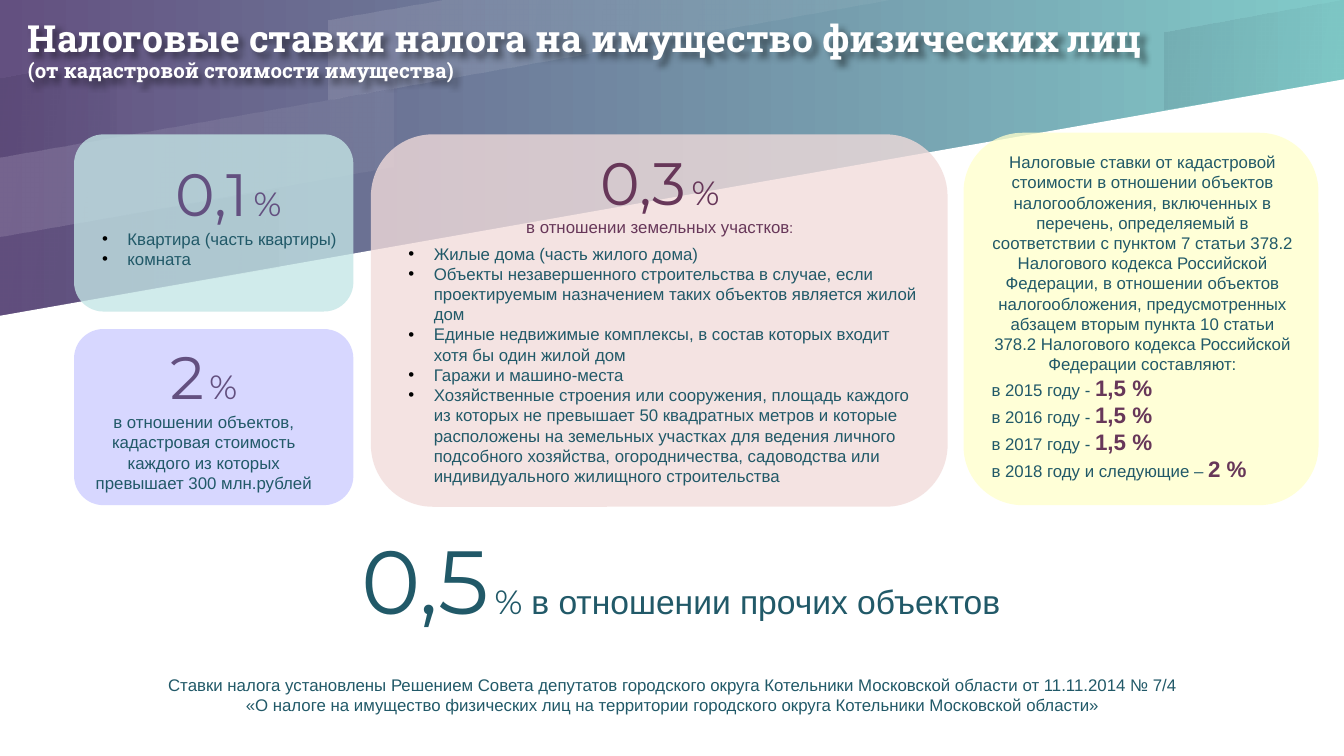
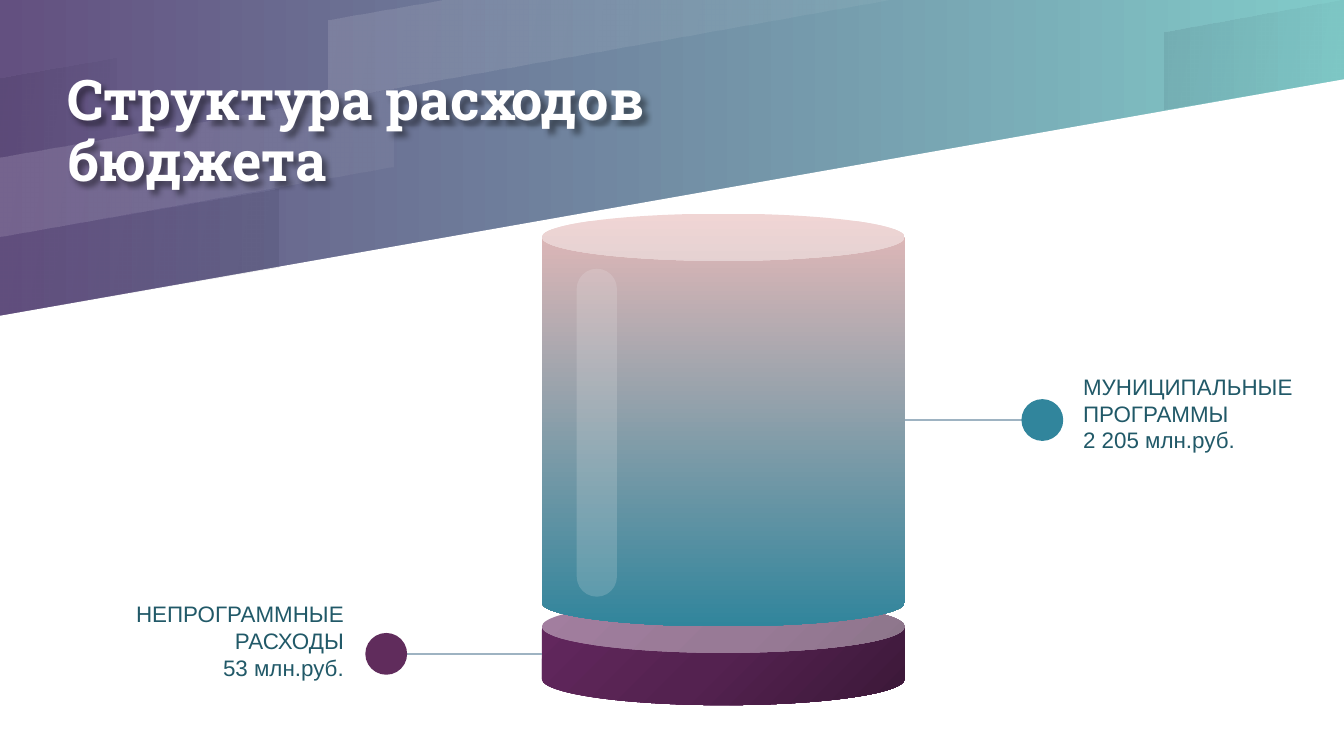
from copy import deepcopy

from lxml import etree
from pptx import Presentation
from pptx.dml.color import RGBColor
from pptx.enum import shapes, text
from pptx.oxml import ns
from pptx.util import Cm, Pt

# Colours
PURPLE = RGBColor(0x63, 0x50, 0x80)
TURQUOISE = RGBColor(0x81, 0xCB, 0xC9)
WHITE = RGBColor(0xFF, 0xFF, 0xFF)
NIGHT = RGBColor(0x00, 0x00, 0x1A)
BLACK = RGBColor(0x00, 0x00, 0x00)
INK = RGBColor(0x21, 0x59, 0x68)
PLUM = RGBColor(0x67, 0x37, 0x59)
MINT = RGBColor(0xC4, 0xE6, 0xE6)
ROSE = RGBColor(0xF2, 0xDC, 0xDB)
CREAM = RGBColor(0xFF, 0xFF, 0xCC)
LILAC = RGBColor(0xCC, 0xCC, 0xFF)
LINE_GREY = RGBColor(0x9E, 0xB3, 0xC2)
SHINE = RGBColor(0xF2, 0xF2, 0xF2)
PINK = RGBColor(0xE6, 0xB9, 0xB8)
TEAL = RGBColor(0x31, 0x85, 0x9C)
BERRY = RGBColor(0x60, 0x2C, 0x5C)
WINE_DARK = RGBColor(0x3B, 0x18, 0x38)
WINE_MID = RGBColor(0x54, 0x22, 0x50)
WINE_LIGHT = RGBColor(0x64, 0x28, 0x5F)

# Fonts
BODY = "Arial"
FIGURE = "Montserrat"
HEADING = "Roboto Slab"

SLIDE_W, SLIDE_H = 25.4, 14.29
LEFT, CENTER, RIGHT = text.PP_ALIGN.LEFT, text.PP_ALIGN.CENTER, text.PP_ALIGN.RIGHT
TOP, MIDDLE = text.MSO_ANCHOR.TOP, text.MSO_ANCHOR.MIDDLE
CARD = shapes.MSO_SHAPE.ROUNDED_RECTANGLE

# Slanted bands behind every slide: colour, opacity at both ends, corners
BANDS = [
    (WHITE, (12, 5), [(8.43, 0), (6.2, 0.38), (6.2, 1.88), (16.89, 0)]),
    (NIGHT, (8, 2), [(0, 1.47), (0, 2.97), (2.21, 2.59), (2.21, 1.09)]),
    (NIGHT, (2, 8), [(0, 4.47), (0, 5.97), (5.26, 5.05), (5.26, 3.56)]),
    (NIGHT, (8, 2), [(25.4, 0), (25.37, 0), (22, 0.61), (22, 2.08), (25.4, 1.5)]),
    (WHITE, (12, 5), [(0, 2.97), (0, 4.47), (7.44, 3.15), (7.44, 1.68)]),
]


def sub(parent, tag, **attributes):
    return etree.SubElement(parent, ns.qn(tag), **attributes)


# Fills
def gradient(fill, start, end, angle=0):
    fill.gradient()
    fill.gradient_angle = -angle % 360
    for stop, color, position in zip(fill.gradient_stops, (start, end), (0, 1)):
        stop.color.rgb = color
        stop.position = position


def set_opacity(shape, *percents):
    colors = list(shape._element.spPr.iter(ns.qn("a:srgbClr")))
    for color, percent in zip(colors, percents):
        sub(color, "a:alpha", val=str(percent * 1000))


def plain(shape, color=None):
    shape.shadow.inherit = False
    shape.line.fill.background()
    if color is not None:
        shape.fill.solid()
        shape.fill.fore_color.rgb = color
    return shape


def preset(slide, kind, place, color=None, opacity=None, adjust=None):
    shape = plain(slide.shapes.add_shape(kind, *map(Cm, place)), color)
    if opacity is not None:
        set_opacity(shape, opacity)
    if adjust is not None:
        shape.adjustments[0] = adjust
    return shape


def outline(slide, corners, color=None):
    points = [(Cm(x), Cm(y)) for x, y in corners]
    builder = slide.shapes.build_freeform(*points[0])
    builder.add_line_segments(points[1:], close=True)
    return plain(builder.convert_to_shape(), color)


def backdrop(slide):
    gradient(slide.background.fill, PURPLE, TURQUOISE)
    outline(slide, [(0, SLIDE_H), (SLIDE_W, SLIDE_H), (SLIDE_W, 1.5), (0, 5.97)], WHITE)
    for color, opacities, corners in BANDS:
        band = outline(slide, corners)
        gradient(band.fill, color, color, 10)
        set_opacity(band, *opacities)


# Text: a paragraph is a list of runs, a run is (text, size, font, colour, bold)
def run(words, size=9, font=BODY, color=INK, bold=False):
    return words, size, font, color, bold


def figure(number, size, color):
    return [run(number, size, FIGURE, color), run(" ", 11, FIGURE, color),
            run("%", 18, FIGURE, color)]


def add_bullet(paragraph):
    properties = paragraph._p.get_or_add_pPr()
    properties.set("marL", str(Cm(0.48)))
    properties.set("indent", str(-Cm(0.48)))
    sub(sub(properties, "a:buClr"), "a:srgbClr", val=str(BLACK))
    sub(properties, "a:buFont", typeface=BODY)
    sub(properties, "a:buChar", char="•")


def write(slide, place, paragraphs, align=LEFT, anchor=TOP, margins=(0.25, 0.13),
          bullets=False, spacing=None):
    """Add a text box; align and bullets may be given per paragraph as a list."""
    box = slide.shapes.add_textbox(*map(Cm, place))
    frame = box.text_frame
    frame.word_wrap = True
    frame.vertical_anchor = anchor
    frame.margin_left = frame.margin_right = Cm(margins[0])
    frame.margin_top = frame.margin_bottom = Cm(margins[1])
    count = len(paragraphs)
    aligns = align if isinstance(align, list) else [align] * count
    marks = bullets if isinstance(bullets, list) else [bullets] * count
    for index, (runs, side, marked) in enumerate(zip(paragraphs, aligns, marks)):
        paragraph = frame.add_paragraph() if index else frame.paragraphs[0]
        paragraph.alignment = side
        if spacing:
            paragraph.line_spacing = spacing
        if marked:
            add_bullet(paragraph)
        for words, size, font, color, bold in runs:
            piece = paragraph.add_run()
            piece.text = words
            piece.font.size = Pt(size)
            piece.font.name = font
            piece.font.color.rgb = color
            piece.font.bold = bold
    return box


def title(slide, place, *lines):
    heading = write(slide, place, [[run(words, size, HEADING, WHITE, True)] for words, size in lines],
                    anchor=MIDDLE, margins=(0, 0), spacing=0.9)
    effects = sub(heading._element.spPr, "a:effectLst")
    shadow = sub(effects, "a:outerShdw", blurRad="38100", dist="38100", dir="2700000", algn="tl")
    sub(sub(shadow, "a:srgbClr", val=str(BLACK)), "a:alpha", val="43000")


# Budget diagram
def callout(slide, center, edge_x, color):
    x, y = center
    leader = slide.shapes.add_connector(shapes.MSO_CONNECTOR.STRAIGHT,
                                        Cm(x), Cm(y), Cm(edge_x), Cm(y))
    leader.line.color.rgb = LINE_GREY
    leader.line.width = Pt(0.75)
    sub(leader._element.spPr, "a:effectLst")
    size = 0.79
    preset(slide, shapes.MSO_SHAPE.OVAL, (x - size / 2, y - size / 2, size, size), color)


def radial_wine(shape):
    gradient(shape.fill, WINE_DARK, WINE_LIGHT)
    fill = shape._element.spPr.find(ns.qn("a:gradFill"))
    first = fill.find(ns.qn("a:gsLst"))[0]
    middle = deepcopy(first)
    middle.set("pos", "50000")
    middle[0].set("val", str(WINE_MID))
    first.addnext(middle)
    linear = fill.find(ns.qn("a:lin"))
    radial = etree.Element(ns.qn("a:path"), path="circle")
    sub(radial, "a:fillToRect", l="100000", t="100000")
    fill.replace(linear, radial)


def tax_rates(slide):
    title(slide, (0.53, 0.56, 24.31, 0.84),
          ("Налоговые ставки налога на имущество физических лиц", 20),
          ("(от кадастровой стоимости имущества)", 11))

    # Cards
    for color, place in [(MINT, (1.4, 2.54, 5.28, 3.35)), (ROSE, (7.01, 2.54, 10.9, 7.04)),
                         (CREAM, (18.21, 2.51, 6.71, 7.04)), (LILAC, (1.4, 6.22, 5.28, 3.33))]:
        preset(slide, CARD, place, color, 78)

    # 0,1 %
    write(slide, (1.68, 2.84, 5.28, 2.39),
          [figure("0,1", 32, PURPLE), [run("Квартира (часть квартиры)")], [run("комната")]],
          [CENTER, LEFT, LEFT], bullets=[False, True, True])

    # 2 %
    write(slide, (1.4, 6.3, 4.9, 3.18),
          [figure("2", 32, PURPLE),
           [run("в отношении объектов, кадастровая стоимость каждого из которых "
                "превышает 300 млн.рублей")]], CENTER)

    # 0,3 %
    write(slide, (9.17, 2.62, 6.6, 2.01),
          [figure("0,3", 32, PLUM),
           [run("в отношении земельных участков", color=PLUM), run(":", 8, color=PLUM)]], CENTER)
    objects = [
        "Жилые дома (часть жилого дома)",
        "Объекты незавершенного строительства в случае, если проектируемым назначением "
        "таких объектов является жилой дом",
        "Единые недвижимые комплексы, в состав которых входит хотя бы один жилой дом",
        "Гаражи и машино-места",
        "Хозяйственные строения или сооружения, площадь каждого из которых не превышает "
        "50 квадратных метров и которые расположены на земельных участках для ведения "
        "личного подсобного хозяйства, огородничества, садоводства или индивидуального "
        "жилищного строительства",
    ]
    write(slide, (7.47, 4.47, 10.21, 5.99), [[run(words)] for words in objects], bullets=True)

    # Rates by year
    intro = ("Налоговые ставки от кадастровой стоимости в отношении объектов налогообложения, "
             "включенных в перечень, определяемый в соответствии с пунктом 7 статьи 378.2 "
             "Налогового кодекса Российской Федерации, в отношении объектов налогообложения, "
             "предусмотренных абзацем вторым пункта 10 статьи 378.2 Налогового кодекса "
             "Российской Федерации составляют:")
    years = [(f"в {year} году - ", "1,5 %") for year in (2015, 2016, 2017)]
    years.append(("в 2018 году и следующие – ", "2 %"))
    write(slide, (18.49, 2.74, 6.2, 6.93),
          [[run(intro)]] + [[run(year), run(rate, 12, color=PLUM, bold=True)]
                            for year, rate in years],
          [CENTER] + [LEFT] * len(years))

    # 0,5 % and the legal basis
    write(slide, (2.67, 9.8, 20.4, 2.31),
          [figure("0,5", 48, INK) + [run(" ", 18, FIGURE),
                                     run("в отношении прочих объектов", 18)]], CENTER)
    write(slide, (2.72, 12.62, 19.96, 1.42),
          [[run("Ставки налога установлены Решением Совета депутатов городского округа "
                "Котельники Московской области от 11.11.2014 № 7/4")],
           [run("«О налоге на имущество физических лиц на территории городского округа "
                "Котельники Московской области»")]], CENTER)


def budget_structure(slide):
    title(slide, (1.27, 0, 15.24, 5.03), ("Структура расходов бюджета", 30))

    # Cylinder
    can = shapes.MSO_SHAPE.CAN
    radial_wine(preset(slide, can, (10.24, 11.35, 6.86, 1.98), adjust=0.5))
    programmes = preset(slide, can, (10.24, 4.04, 6.86, 7.8), adjust=0.13)
    gradient(programmes.fill, PINK, TEAL, 90)
    preset(slide, CARD, (10.9, 5.08, 0.76, 6.2), SHINE, 18, 0.5)

    # Labels
    callout(slide, (19.7, 7.94), 17.1, TEAL)
    callout(slide, (7.3, 12.36), 10.24, BERRY)
    for place, side, lines in [
        ((20.22, 5.89, 4.5, 3.84), LEFT, ["МУНИЦИПАЛЬНЫЕ ПРОГРАММЫ", "2 205 млн.руб."]),
        ((1.57, 11.25, 5.18, 1.73), RIGHT, ["НЕПРОГРАММНЫЕ", "РАСХОДЫ", "53 млн.руб."]),
    ]:
        write(slide, place, [[run(words, 12)] for words in lines], side, MIDDLE, (0.25, 0.25))


def main():
    deck = Presentation()
    deck.slide_width, deck.slide_height = Cm(SLIDE_W), Cm(SLIDE_H)
    for fill_slide in (tax_rates, budget_structure):
        slide = deck.slides.add_slide(deck.slide_layouts[6])
        backdrop(slide)
        fill_slide(slide)
    deck.save("out.pptx")


if __name__ == "__main__":
    main()
